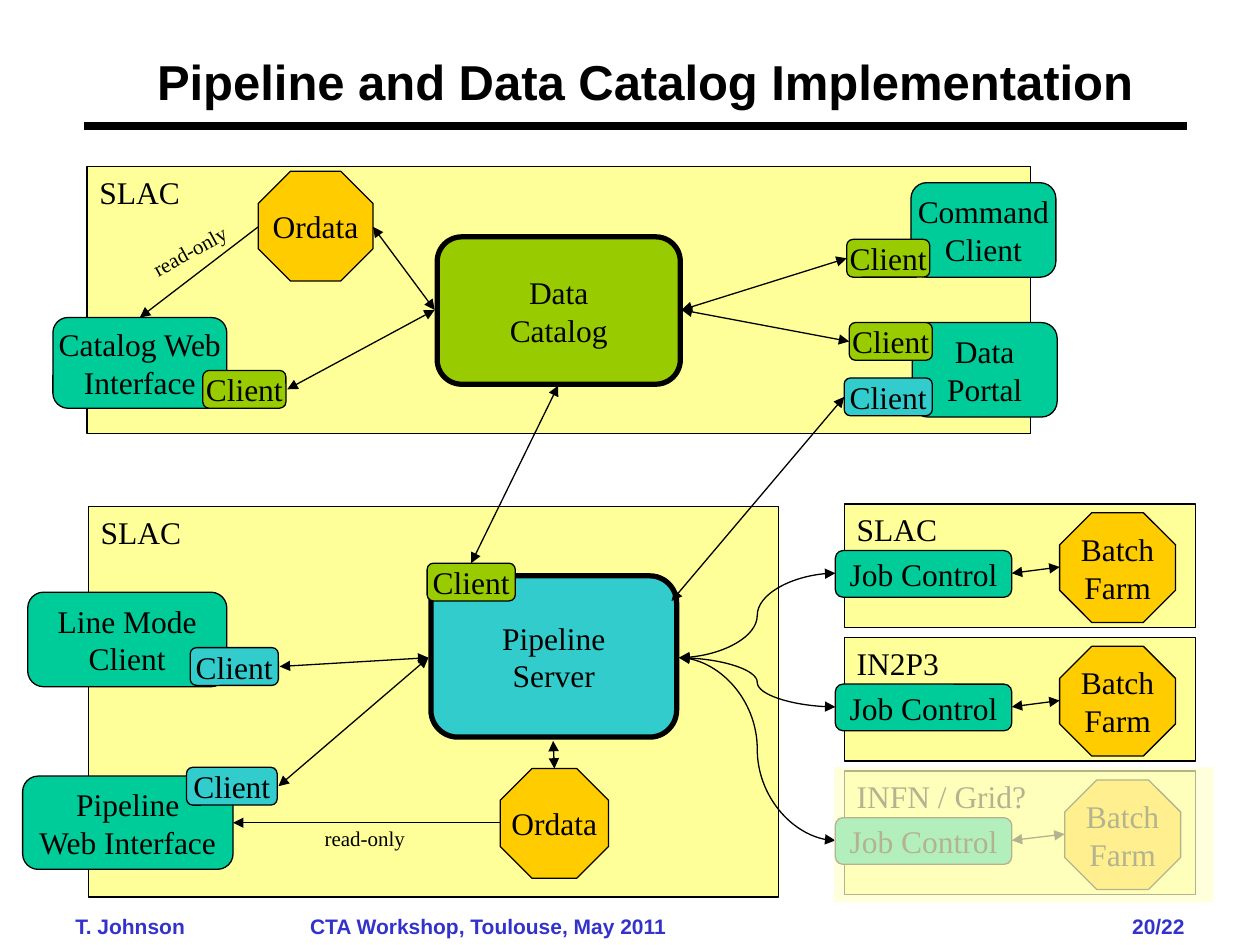
from lxml import etree
from pptx import Presentation
from pptx.dml.color import RGBColor
from pptx.enum.shapes import MSO_CONNECTOR, MSO_SHAPE
from pptx.enum.text import MSO_ANCHOR, PP_ALIGN
from pptx.oxml.ns import qn
from pptx.util import Inches, Pt

RECT, ROUND, OCTAGON = MSO_SHAPE.RECTANGLE, MSO_SHAPE.ROUNDED_RECTANGLE, MSO_SHAPE.OCTAGON
STRAIGHT, CURVE = MSO_CONNECTOR.STRAIGHT, MSO_CONNECTOR.CURVE
LEFT, CENTER, RIGHT = PP_ALIGN.LEFT, PP_ALIGN.CENTER, PP_ALIGN.RIGHT
TOP, MIDDLE = MSO_ANCHOR.TOP, MSO_ANCHOR.MIDDLE
COLORS = {"ink": "000000", "footer": "3333CC", "site": "FFFF99", "client": "00CC99",
          "catalog": "99CC00", "pipeline": "33CCCC", "store": "FFCC00", "veil": "FFFFCC"}


def color(name):
    """Return the named colour."""
    return RGBColor.from_string(COLORS[name])


def write(shape, text, size=18, font="Times New Roman", ink="ink", bold=False,
          align=CENTER, anchor=MIDDLE, wrap=False):
    """Write text into a shape, one paragraph a line."""
    frame = shape.text_frame
    frame.word_wrap, frame.vertical_anchor = wrap, anchor
    frame.text = text
    for para in frame.paragraphs:
        para.alignment = align
        para.font.size, para.font.name, para.font.bold = Pt(size), font, bold
        para.font.color.rgb = color(ink)


def add_node(shapes, origin, area, text, fill, kind=ROUND, width=0.75, **style):
    """Add a filled, outlined shape at an offset from the origin."""
    left, top, wide, high = area
    node = shapes.add_shape(kind, Inches(origin[0] + left), Inches(origin[1] + top),
                            Inches(wide), Inches(high))
    node.shadow.inherit = False
    node.fill.solid()
    node.fill.fore_color.rgb = color(fill)
    node.line.color.rgb = color("ink")
    node.line.width = Pt(width)
    write(node, text, **style)


def add_line(shapes, origin, ends, kind=STRAIGHT, arrows=("headEnd", "tailEnd"), width=0.75):
    """Add a connector with triangle arrowheads at an offset from the origin."""
    x1, y1, x2, y2 = ends
    line = shapes.add_connector(kind, Inches(origin[0] + x1), Inches(origin[1] + y1),
                                Inches(origin[0] + x2), Inches(origin[1] + y2))
    line.line.color.rgb = color("ink")
    line.line.width = Pt(width)
    properties = line._element.spPr
    for arrow in arrows:
        etree.SubElement(properties.find(qn("a:ln")), qn(f"a:{arrow}"), type="triangle")
    etree.SubElement(properties, qn("a:effectLst"))


def add_label(shapes, origin, area, text, rotation=0, **style):
    """Add a small wrapped text box at an offset from the origin."""
    left, top, wide, high = area
    label = shapes.add_textbox(Inches(origin[0] + left), Inches(origin[1] + top),
                               Inches(wide), Inches(high))
    label.rotation = rotation
    write(label, text, size=12, anchor=TOP, wrap=True, **style)


def draw_header(page, box):
    """Place the title and the rule below it."""
    title = page.shapes.title
    title.left, title.top, title.width, title.height = (Inches(value) for value in box)
    write(title, "Pipeline and Data Catalog Implementation", size=28, font="Arial",
          bold=True, wrap=True)
    add_line(page.shapes, (0, box[1] + box[3]), (0.67, 0, 9.42, 0), arrows=(), width=4.5)


def draw_footer(page, box):
    """Place the author, event and page number."""
    for left, wide, text, align in ((0, 1.25, "T. Johnson", LEFT),
                                    (1.5, 3.75, "CTA Workshop, Toulouse, May 2011", CENTER),
                                    (7.75, 1.25, "20/22", RIGHT)):
        add_label(page.shapes, box, (left, 0, wide, box[3]), text, align=align,
                  font="Arial", ink="footer", bold=True)


def draw_frame(shapes, box, name):
    """Place the yellow frame of a site with its name."""
    add_node(shapes, box, (0, 0, *box[2:]), name, "site", RECT, align=LEFT, anchor=TOP)


def draw_catalog(page, box):
    """Place the data catalog, its database and its clients."""
    shapes = page.shapes
    draw_frame(shapes, box, "SLAC")
    add_node(shapes, box, (2.78, 0.56, 1.93, 1.17), "Data\nCatalog", "catalog", width=3)
    add_node(shapes, box, (1.36, 0.04, 0.91, 0.87), "Ordata", "store", OCTAGON)
    for area, text in (((-0.27, 1.2, 1.38, 0.72), "Catalog Web\nInterface"),
                       ((6.54, 0.13, 1.15, 0.75), "Command\nClient"),
                       ((6.55, 1.24, 1.15, 0.75), "Data\nPortal")):
        add_node(shapes, box, area, text, "client")
    for left, top in ((0.92, 1.62), (6.03, 0.58), (6.05, 1.24)):
        add_node(shapes, box, (left, top, 0.66, 0.3), "Client", "catalog")
    add_node(shapes, box, (6.01, 1.68, 0.7, 0.3), "Client", "pipeline")
    for ends in ((1.59, 1.77, 2.76, 1.14), (2.27, 0.48, 2.76, 1.14),
                 (6.03, 0.73, 4.72, 1.14), (6.05, 1.39, 4.72, 1.14)):
        add_line(shapes, box, ends)
    add_line(shapes, box, (1.36, 0.48, 0.42, 1.2), arrows=("tailEnd",))
    add_label(shapes, box, (0.22, 0.52, 1.19, 0.3), "read-only", rotation=331.2)


def draw_pipeline(page, box):
    """Place the pipeline server, its database and its clients."""
    shapes = page.shapes
    draw_frame(shapes, box, "SLAC")
    add_node(shapes, box, (2.72, 0.55, 1.95, 1.28), "Pipeline\nServer", "pipeline", width=3)
    add_node(shapes, box, (3.27, 2.08, 0.86, 0.87), "Ordata", "store", OCTAGON)
    for area, text, fill in (((-0.52, 2.14, 1.67, 0.74), "Pipeline\nWeb Interface", "client"),
                             ((-0.48, 0.68, 1.58, 0.75), "Line Mode\nClient", "client"),
                             ((0.81, 1.12, 0.7, 0.3), "Client", "pipeline"),
                             ((0.78, 2.07, 0.72, 0.3), "Client", "pipeline"),
                             ((2.69, 0.45, 0.7, 0.3), "Client", "catalog")):
        add_node(shapes, box, area, text, fill)
    for ends in ((3.7, 2.08, 3.69, 1.86), (1.51, 2.22, 2.7, 1.2), (1.52, 1.27, 2.7, 1.2)):
        add_line(shapes, box, ends)
    add_line(shapes, box, (3.27, 2.51, 1.15, 2.51), arrows=("tailEnd",))
    add_label(shapes, box, (1.6, 2.48, 1.19, 0.3), "read-only")


def draw_batch_site(page, box, name, farm_left=1.71, veiled=False):
    """Place a group with a batch farm and its job control."""
    shapes = page.shapes.add_group_shape().shapes
    draw_frame(shapes, box, name)
    add_node(shapes, box, (-0.07, 0.37, 1.4, 0.37), "Job Control", "client")
    add_node(shapes, box, (farm_left, 0.07, 0.92, 0.87), "Batch\nFarm", "store", OCTAGON)
    add_line(shapes, box, (1.33, 0.55, farm_left, 0.5))
    if veiled:
        veil = shapes.add_shape(RECT, Inches(box[0] - 0.08), Inches(box[1] - 0.03),
                                Inches(3.01), Inches(1.07))
        veil.shadow.inherit = False
        veil.fill.solid()
        veil.fill.fore_color.rgb = color("veil")
        veil.line.fill.background()
        tint = veil._element.spPr.find(qn("a:solidFill"))[0]
        etree.SubElement(tint, qn("a:alpha"), val="70000")


def draw_links(page, origin, job_tops):
    """Join the pipeline server to the batch sites and the catalog."""
    for top in job_tops:
        add_line(page.shapes, origin, (5.39, 5.22, 6.63, top), CURVE)
    for ends in ((4.43, 3.06, 3.74, 4.47), (6.7, 3.15, 5.33, 4.77)):
        add_line(page.shapes, origin, ends)


def main():
    """Build the slide and save it."""
    deck = Presentation()
    deck.slide_width, deck.slide_height = Inches(10), Inches(7.5)
    page = deck.slides.add_slide(deck.slide_layouts[5])
    draw_header(page, (1.06, 0.28, 8.12, 0.72))
    draw_footer(page, (0.5, 7.2, 9, 0.3))
    draw_catalog(page, (0.69, 1.32, 7.49, 2.12))
    draw_pipeline(page, (0.7, 4.02, 5.48, 3.1))
    site_tops = [4 + 1.06 * row for row in range(3)]
    draw_links(page, (0, 0), [top + 0.55 for top in site_tops])
    for top, name, farm_left, veiled in zip(site_tops, ("SLAC", "IN2P3", "INFN / Grid?"),
                                            (1.71, 1.71, 1.75), (False, False, True)):
        draw_batch_site(page, (6.7, top, 2.79, 0.98), name, farm_left, veiled)
    deck.save("out.pptx")


if __name__ == "__main__":
    main()
